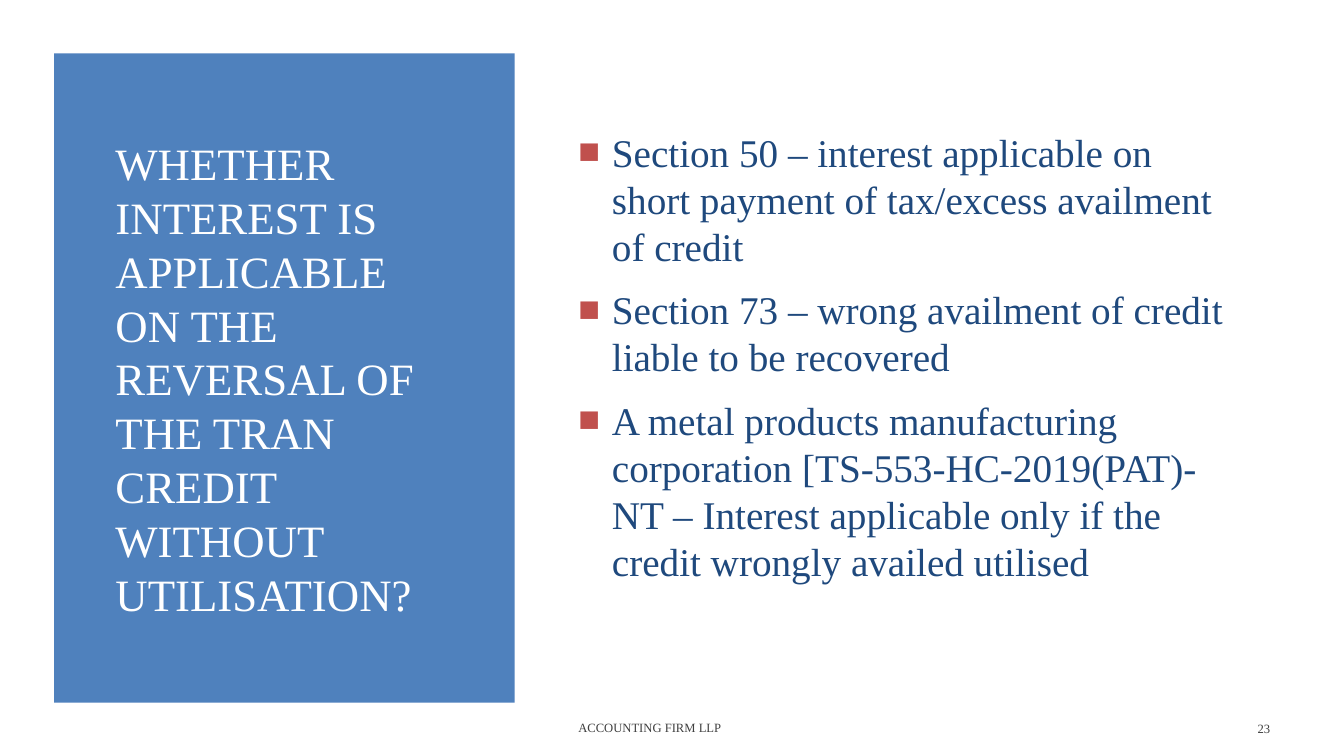
from lxml import etree
from pptx import Presentation
from pptx.dml.color import RGBColor
from pptx.enum.shapes import MSO_SHAPE
from pptx.enum.text import MSO_ANCHOR, MSO_AUTO_SIZE, PP_ALIGN
from pptx.oxml.ns import qn
from pptx.util import Pt

RECTANGLE = MSO_SHAPE.RECTANGLE
MIDDLE = MSO_ANCHOR.MIDDLE
NO_AUTOFIT = MSO_AUTO_SIZE.NONE
LEFT, RIGHT = PP_ALIGN.LEFT, PP_ALIGN.RIGHT
TITLE_ONLY = 5
FONT = "Times New Roman"
BLUE, NAVY, RED, GREY, WHITE = "4F81BD", "1F497D", "C0504D", "404040", "FFFFFF"

QUESTION = ("WHETHER INTEREST IS APPLICABLE ON THE REVERSAL OF THE TRAN "
            "CREDIT WITHOUT UTILISATION?")
PROVISIONS = [
    "Section 50 – interest applicable on short payment of tax/excess availment of credit",
    "Section 73 – wrong availment of credit liable to be recovered",
    "A metal products manufacturing corporation [TS-553-HC-2019(PAT)-NT – "
    "Interest applicable only if the credit wrongly availed utilised",
]
FIRM = "ACCOUNTING FIRM LLP"
PAGE = "23"


def color(value):
    return RGBColor.from_string(value)


def apply(target, formats):
    for name, value in formats.items():
        setattr(target, name, value)


def place(part, box):
    apply(part, dict(zip(("left", "top", "width", "height"), map(Pt, box))))


def write(part, lines, size, ink, **paragraph_formats):
    frame = part.text_frame
    apply(frame, {"word_wrap": True, "auto_size": NO_AUTOFIT, "vertical_anchor": MIDDLE})
    frame.text = "\n".join(lines)
    for paragraph in frame.paragraphs:
        apply(paragraph, {"alignment": LEFT, **paragraph_formats})
        for run in paragraph.runs:
            apply(run.font, {"name": FONT, "size": Pt(size)})
            run.font.color.rgb = color(ink)
    return frame


def add_bullet(paragraph, indent):
    properties = paragraph._p.get_or_add_pPr()
    properties.set("marL", str(Pt(indent)))
    properties.set("indent", str(-Pt(indent)))
    bullet_color = etree.SubElement(properties, qn("a:buClr"))
    etree.SubElement(bullet_color, qn("a:srgbClr"), val=RED)
    etree.SubElement(properties, qn("a:buSzPct"), val="92000")
    etree.SubElement(properties, qn("a:buFont"), typeface=FONT)
    etree.SubElement(properties, qn("a:buChar"), char="■")


def question_panel(slide, box):
    left, top, width, height = box
    panel = slide.shapes.add_shape(RECTANGLE, *map(Pt, box))
    panel.shadow.inherit = False
    panel.fill.solid()
    panel.fill.fore_color.rgb = color(BLUE)
    panel.line.fill.background()
    question = slide.shapes.title
    panel._element.addnext(question._element)
    place(question, (left + 36.7, top + 49.7, width - 71.3, height - 99.4))
    write(question, [QUESTION], 32, WHITE)


def provisions_list(slide, box):
    provisions = slide.shapes.add_textbox(*map(Pt, box))
    frame = write(provisions, PROVISIONS, 28, NAVY,
                  space_before=Pt(5.6), space_after=Pt(6))
    frame.margin_bottom = Pt(34.8)
    for paragraph in frame.paragraphs:
        add_bullet(paragraph, 24)


def footer(slide, box):
    left, top, width, height = box
    number_width = 82.8
    firm = slide.shapes.add_textbox(*map(Pt, (left, top, 384.5, height)))
    write(firm, [FIRM], 9, GREY)
    number = slide.shapes.add_textbox(
        *map(Pt, (left + width - number_width, top + 0.7, number_width, height)))
    write(number, [PAGE], 9, GREY, alignment=RIGHT)


def main():
    deck = Presentation()
    apply(deck, {"slide_width": Pt(960), "slide_height": Pt(540)})
    slide = deck.slides.add_slide(deck.slide_layouts[TITLE_ONLY])
    question_panel(slide, (38.6, 38.2, 329, 463.7))
    provisions_list(slide, (406, 87.8, 481, 364.3))
    footer(slide, (406, 505.4, 508.4, 28.8))
    deck.save("out.pptx")


if __name__ == "__main__":
    main()
